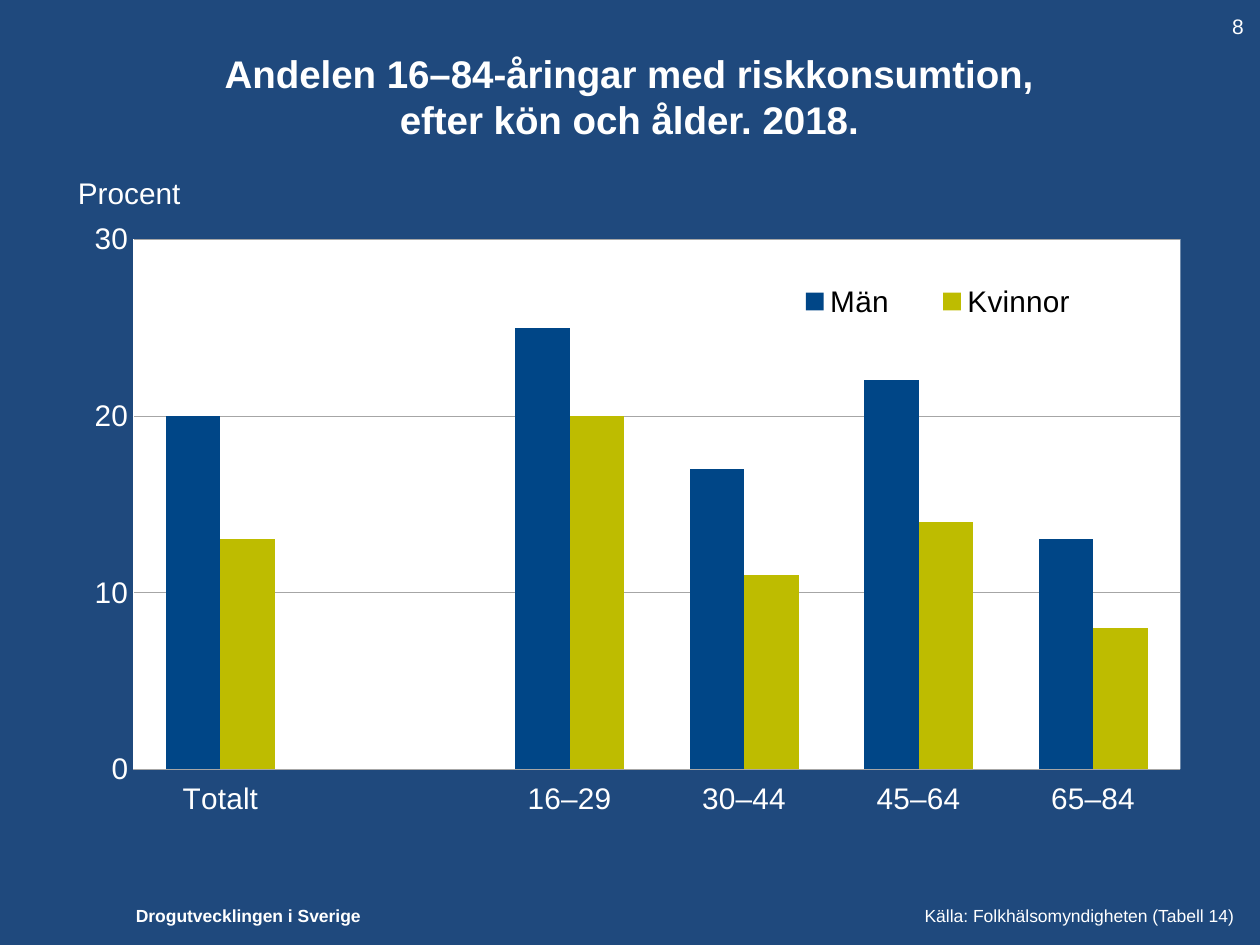
from lxml import etree
from pptx import Presentation
from pptx.chart.data import CategoryChartData
from pptx.dml.color import RGBColor
from pptx.enum.chart import XL_CHART_TYPE, XL_LEGEND_POSITION, XL_TICK_MARK
from pptx.enum.text import MSO_ANCHOR, PP_ALIGN
from pptx.oxml import parse_xml
from pptx.util import Inches, Pt

COLUMN = XL_CHART_TYPE.COLUMN_CLUSTERED
RIGHT = XL_LEGEND_POSITION.RIGHT
OUT, NONE = XL_TICK_MARK.OUTSIDE, XL_TICK_MARK.NONE
TOP, MID = MSO_ANCHOR.TOP, MSO_ANCHOR.MIDDLE
LEFT, CENTER = PP_ALIGN.LEFT, PP_ALIGN.CENTER
CNS = "http://schemas.openxmlformats.org/drawingml/2006/chart"
ANS = "http://schemas.openxmlformats.org/drawingml/2006/main"
FACE, WHITE, NAVY = "Arial", "FFFFFF", "1F497D"
CATS = ["Totalt", "", "16–29", "30–44", "45–64", "65–84"]
SERIES = [
    ("Män", [20, None, 25, 17, 22, 13], "004687"),
    ("Kvinnor", [13, None, 20, 11, 14, 8], "BEBC00"),
]


def paint(fill, color):
    """Give a fill one solid colour."""
    fill.solid()
    fill.fore_color.rgb = RGBColor.from_string(color)


def assign(item, values):
    """Set attributes from a dict of format values."""
    for name, value in values.items():
        setattr(item, name, value)


def style(font, size, color=WHITE, bold=False):
    """Set face, size, weight and colour of a font."""
    assign(font, {"name": FACE, "size": Pt(size), "bold": bold})
    paint(font.fill, color)


def add_text(slide, box, text, size, bold=False, align=LEFT, anchor=TOP, wrap=True):
    """Add a text box with one paragraph."""
    frame = slide.shapes.add_textbox(*map(Inches, box)).text_frame
    assign(frame, {"word_wrap": wrap, "vertical_anchor": anchor, "text": text})
    para = frame.paragraphs[0]
    para.alignment = align
    for run in para.runs:
        style(run.font, size, WHITE, bold)


def place(node, index, box, inner=False):
    """Fix the layout of a chart part as fractions of the chart."""
    for old in node.findall(f"{{{CNS}}}layout"):
        node.remove(old)
    layout = etree.Element(f"{{{CNS}}}layout")
    manual = etree.SubElement(layout, f"{{{CNS}}}manualLayout")
    pairs = [("layoutTarget", "inner")] if inner else []
    pairs += [("xMode", "edge"), ("yMode", "edge")]
    pairs += zip("xywh", map(str, box))
    for tag, value in pairs:
        etree.SubElement(manual, f"{{{CNS}}}{tag}").set("val", value)
    node.insert(index, layout)


def format_axes(chart):
    """Format the category and value axes."""
    cat, val = chart.category_axis, chart.value_axis
    assign(cat, {"major_tick_mark": OUT, "has_major_gridlines": False})
    assign(val, {"major_tick_mark": NONE, "has_major_gridlines": True,
                 "minimum_scale": 0, "maximum_scale": 30, "major_unit": 10})
    for axis in (cat, val):
        axis.minor_tick_mark = NONE
        style(axis.tick_labels.font, 17)
    cat.format.line.fill.background()
    for part, color in ((val, WHITE), (val.major_gridlines, "A6A6A6")):
        part.format.line.width = Pt(0.23)
        paint(part.format.line.fill, color)


def add_columns(slide, box):
    """Add the clustered column chart with its legend."""
    data = CategoryChartData()
    data.categories = CATS
    for name, values, _ in SERIES:
        data.add_series(name, values)
    chart = slide.shapes.add_chart(COLUMN, *map(Inches, box), data).chart
    assign(chart, {"has_title": False, "has_legend": True})
    style(chart.font, 17)
    plot = chart.plots[0]
    assign(plot, {"gap_width": 120, "overlap": 0, "vary_by_categories": False})
    for series, (_, _, color) in zip(plot.series, SERIES):
        paint(series.format.fill, color)
    format_axes(chart)
    legend = chart.legend
    assign(legend, {"position": RIGHT, "include_in_layout": True})
    style(legend.font, 17, "000000")
    key = chart.element.find(f".//{{{CNS}}}legend")
    place(key, 1, (0.62, 0.08, 0.32, 0.1))
    area = chart.element.find(f".//{{{CNS}}}plotArea")
    place(area, 0, (0.05, 0.03, 0.95, 0.85), inner=True)
    area.append(parse_xml(
        f'<c:spPr xmlns:c="{CNS}" xmlns:a="{ANS}"><a:solidFill>'
        f'<a:srgbClr val="{WHITE}"/></a:solidFill></c:spPr>'))


def main():
    """Build and save the slide."""
    deck = Presentation()
    assign(deck, {"slide_width": Inches(10), "slide_height": Inches(7.5)})
    slide = deck.slides.add_slide(deck.slide_layouts[6])
    paint(slide.background.fill, NAVY)
    add_text(slide, (0.98, 7.13, 2.01, 0.27), "Drogutvecklingen i Sverige", 10,
             bold=True, wrap=False)
    add_text(slide, (7.24, 7.13, 2.7, 0.27), "Källa: Folkhälsomyndigheten (Tabell 14)", 10)
    add_text(slide, (0.94, 0.21, 8.11, 1.11),
             "Andelen 16–84-åringar med riskkonsumtion,\vefter kön och ålder. 2018.",
             22, bold=True, align=CENTER, anchor=MID)
    add_columns(slide, (0.62, 1.75, 8.75, 4.95))
    add_text(slide, (0.52, 1.33, 1.03, 0.39), "Procent", 17, anchor=MID)
    add_text(slide, (9.68, 0.06, 0.27, 0.3), "8", 12)
    deck.save("out.pptx")


if __name__ == "__main__":
    main()
